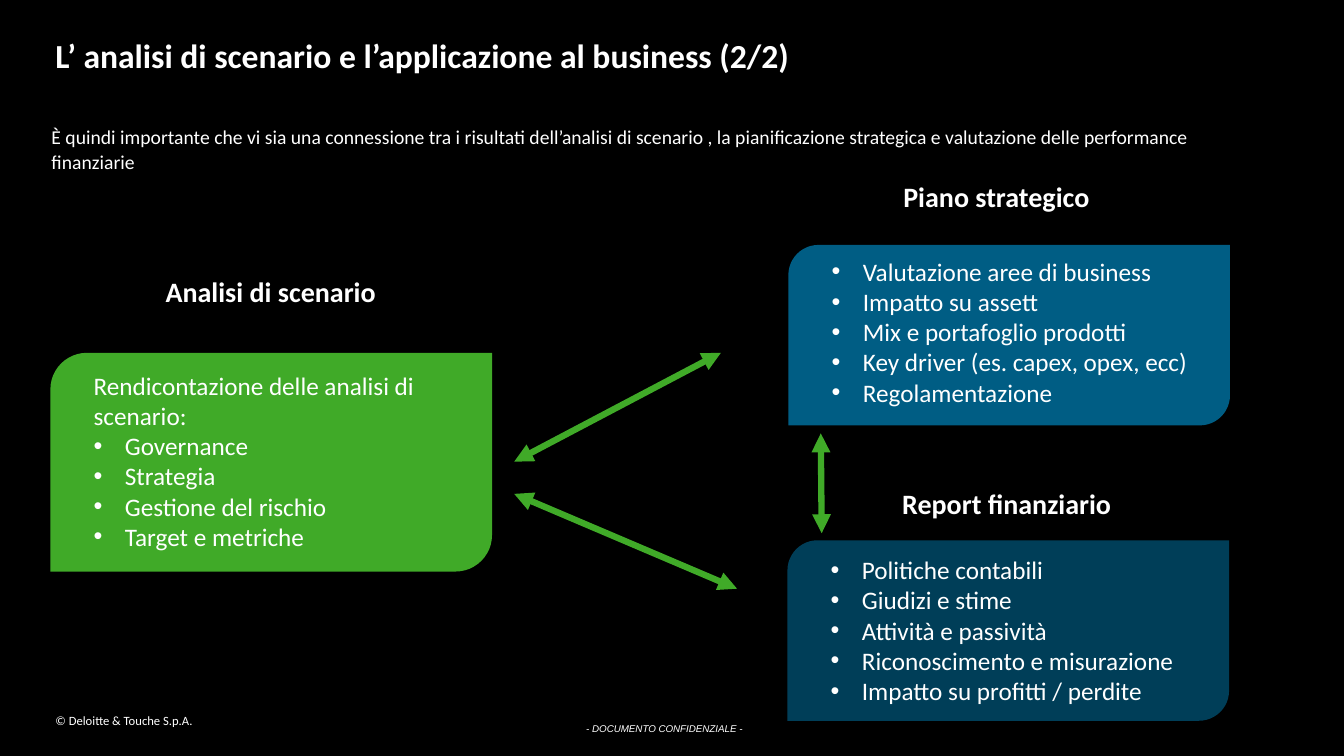
from pptx import Presentation
from pptx.dml.color import RGBColor
from pptx.enum.shapes import MSO_CONNECTOR, MSO_SHAPE
from pptx.enum.text import MSO_ANCHOR as ANCHOR, PP_ALIGN as ALIGN
from pptx.oxml.ns import qn
from pptx.util import Inches, Pt
from lxml.etree import SubElement

COLORS = {"black": "000000", "white": "FFFFFF", "green": "40AA28",
          "blue": "005D84", "navy": "003E58"}
rgb = {name: RGBColor.from_string(code) for name, code in COLORS.items()}

prs = Presentation()
prs.slide_width, prs.slide_height = Inches(13.33), Inches(7.5)
s = prs.slides.add_slide(prs.slide_layouts[6])
s.background.fill.solid()
s.background.fill.fore_color.rgb = rgb["black"]


def share(x, y, *size):
    """Turn percentages of the slide's width and height into lengths."""
    sides = (prs.slide_width, prs.slide_height) * 2
    return [int(side * v / 100) for side, v in zip(sides, (x, y, *size))]


def add_text(box, lines, fmt, margin=True, wrap=True, align=ALIGN.LEFT,
             anchor=ANCHOR.TOP, spacing=None):
    """Add white text; a line that starts with • becomes a real bullet."""
    tf = s.shapes.add_textbox(*share(*box)).text_frame
    tf.word_wrap, tf.vertical_anchor = wrap, anchor
    if not margin:
        tf.margin_left = tf.margin_top = tf.margin_right = tf.margin_bottom = 0
    for i, line in enumerate(lines):
        p = tf.add_paragraph() if i else tf.paragraphs[0]
        p.alignment, p.line_spacing = align, spacing
        if line.startswith("•"):
            pPr = p._p.get_or_add_pPr()
            pPr.set("marL", str(Inches(0.31)))
            pPr.set("indent", str(-Inches(0.31)))
            SubElement(pPr, qn("a:buFont")).set("typeface", "Arial")
            SubElement(pPr, qn("a:buChar")).set("char", "•")
        r = p.add_run()
        r.text = line.lstrip("• ")
        r.font.color.rgb = rgb["white"]
        for key, value in ({"name": "Calibri"} | fmt).items():
            setattr(r.font, key, value)


# Title, introduction and footer
add_text((4.13, 4.67, 75.17, 4.93),
         ["L’ analisi di scenario e l’applicazione al business (2/2)"],
         {"size": Pt(24), "bold": True}, margin=False)
add_text((3.83, 16.4, 86.57, 3.07),
         ["È quindi importante che vi sia una connessione tra i risultati "
          "dell’analisi di scenario , la pianificazione strategica e "
          "valutazione delle performance finanziarie"],
         {"size": Pt(14)}, margin=False, spacing=1.06)
add_text((4.13, 94.27, 43.96, 2), ["© Deloitte & Touche S.p.A."],
         {"size": Pt(9)}, margin=False)
add_text((41.26, 94.53, 16.35, 3.73), ["- DOCUMENTO CONFIDENZIALE -"],
         {"name": "Arial", "size": Pt(7), "italic": True}, margin=False,
         align=ALIGN.CENTER, anchor=ANCHOR.MIDDLE)

# Cards: heading, heading box, wrap, alignment, colour, left, top, height,
# top and height of the text, lines
CARD_W, TEXT_DX, TEXT_W = 32.86, 2.48, 28.96
cards = [
    ("Analisi di scenario", (7.88, 35.6, 24.53, 5.87), True, ALIGN.CENTER,
     "green", 3.75, 46.67, 28.93, 48.27, 25.6,
     ["Rendicontazione delle analisi di scenario:", "• Governance",
      "• Strategia", "• Gestione del rischio", "• Target e metriche"]),
    ("Piano strategico", (66.47, 23.07, 15.45, 5.87), False, ALIGN.LEFT,
     "blue", 58.66, 32.4, 23.87, 33.2, 21.6,
     ["• Valutazione aree di business", "• Impatto su assett",
      "• Mix e portafoglio prodotti", "• Key driver (es. capex, opex, ecc)",
      "• Regolamentazione"]),
    ("Report finanziario", (66.39, 63.73, 17.18, 5.87), False, ALIGN.LEFT,
     "navy", 58.59, 71.47, 23.87, 72.67, 21.6,
     ["• Politiche contabili", "• Giudizi e stime", "• Attività e passività",
      "• Riconoscimento e misurazione", "• Impatto su profitti / perdite"]),
]
for heading, box, wrap, align, color, x, y, h, text_y, text_h, lines in cards:
    add_text(box, [heading], {"size": Pt(20), "bold": True},
             wrap=wrap, align=align)
    sp = s.shapes.add_shape(MSO_SHAPE.ROUND_2_DIAG_RECTANGLE,
                            *share(x, y, CARD_W, h))
    sp.shadow.inherit = False
    sp.fill.solid()
    sp.fill.fore_color.rgb = rgb[color]
    sp.line.fill.background()
    add_text((x + TEXT_DX, text_y, TEXT_W, text_h), lines, {"size": Pt(18)})

# Double arrows between the cards
arrows = [((38.26, 61.07), (53.64, 46.67)),
          ((38.26, 65.33), (54.84, 77.87)),
          ((61.07, 57.33), (61.14, 70.53))]
for start, end in arrows:
    arrow = s.shapes.add_connector(MSO_CONNECTOR.STRAIGHT,
                                   *share(*start), *share(*end))
    arrow.line.color.rgb = rgb["green"]
    arrow.line.width = Pt(4.5)
    ln = arrow.line._get_or_add_ln()
    for tip in ("a:headEnd", "a:tailEnd"):
        SubElement(ln, qn(tip)).set("type", "triangle")
    SubElement(arrow._element.spPr, qn("a:effectLst"))

prs.save("out.pptx")
